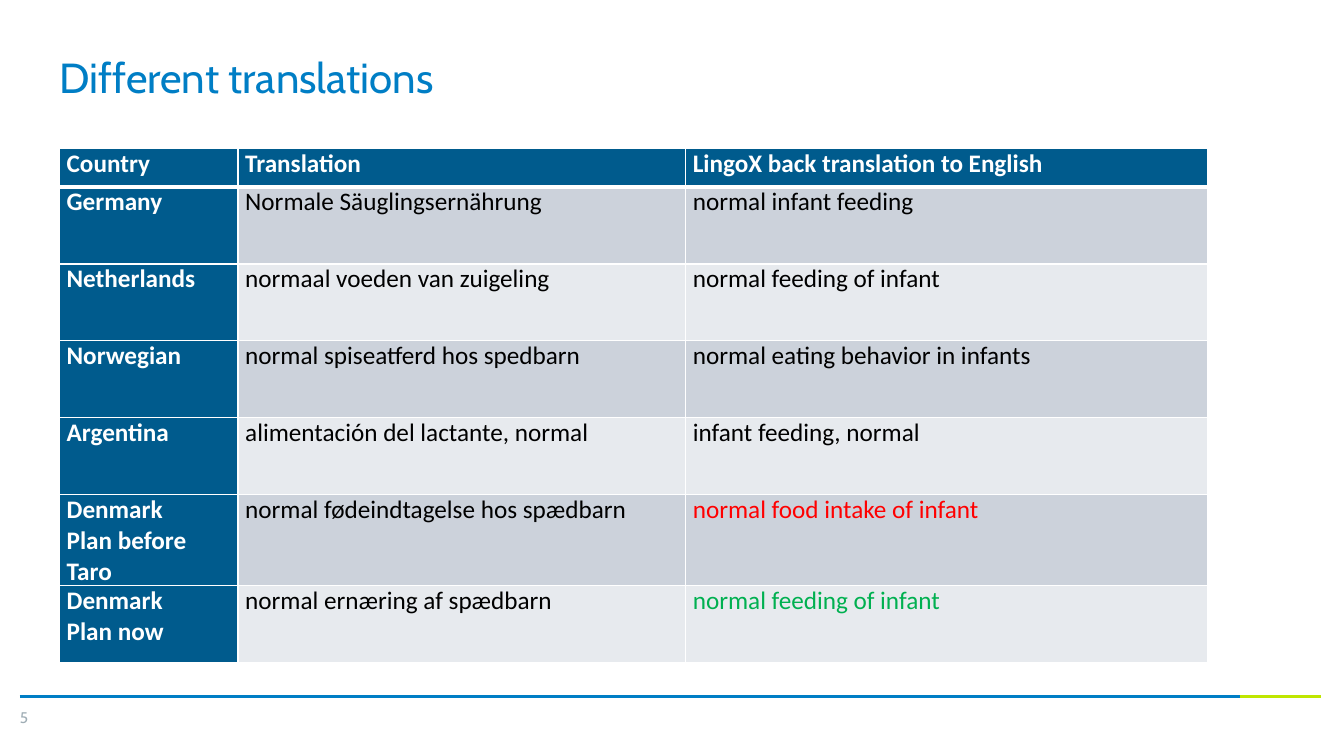
from dataclasses import dataclass

from lxml import etree
from pptx import Presentation
from pptx.dml.color import RGBColor
from pptx.enum.shapes import MSO_CONNECTOR
from pptx.enum.text import MSO_ANCHOR, PP_ALIGN
from pptx.oxml.ns import qn
from pptx.util import Cm, Pt

STRAIGHT = MSO_CONNECTOR.STRAIGHT
TOP = MSO_ANCHOR.TOP
LEFT = PP_ALIGN.LEFT


@dataclass(frozen=True)
class Theme:
    blue: str = "007EC5"
    navy: str = "005B8D"
    lime: str = "BFE600"
    grey: str = "9FADB5"
    white: str = "FFFFFF"
    black: str = "000000"
    red: str = "FF0000"
    green: str = "00B050"
    bands: tuple = ("CCD2DB", "E7EAEE")
    head_font: str = "Cabin"
    body_font: str = "Calibri"
    title_size: int = 30
    body_size: int = 18
    page_size: int = 11


T = Theme()

HEADER = ("Country", "Translation", "LingoX back translation to English")
ROWS = (
    ("Germany", "Normale Säuglingsernährung", "normal infant feeding", T.black),
    ("Netherlands", "normaal voeden van zuigeling", "normal feeding of infant", T.black),
    ("Norwegian", "normal spiseatferd hos spedbarn", "normal eating behavior in infants", T.black),
    ("Argentina", "alimentación del lactante, normal", "infant feeding, normal", T.black),
    ("Denmark\nPlan before Taro", "normal fødeindtagelse hos spædbarn", "normal food intake of infant", T.red),
    ("Denmark\nPlan now", "normal ernæring af spædbarn", "normal feeding of infant", T.green),
)
COL_WIDTHS = (4.5, 11.28, 13.16)
HEADER_HEIGHT, ROW_HEIGHT = 0.97, 1.94


def write(tf, text, *, size, color, font=T.body_font, bold=False, spacing=None):
    for i, line in enumerate(text.split("\n")):
        p = tf.paragraphs[0] if i == 0 else tf.add_paragraph()
        p.alignment = LEFT
        if spacing:
            p.line_spacing = Pt(spacing)
        r = p.add_run()
        r.text = line
        r.font.name = font
        r.font.size = Pt(size)
        r.font.bold = bold
        r.font.color.rgb = RGBColor.from_string(color)


def trim(tf):
    tf.margin_left = tf.margin_top = tf.margin_right = tf.margin_bottom = 0
    tf.vertical_anchor = TOP
    tf.word_wrap = True


def add_title(s, x, y, w, h):
    sp = s.shapes.title
    sp.left, sp.top, sp.width, sp.height = Cm(x), Cm(y), Cm(w), Cm(h)
    trim(sp.text_frame)
    write(sp.text_frame, "Different translations", size=T.title_size,
          color=T.blue, font=T.head_font, spacing=T.title_size)


def set_borders(cell, **widths):
    tcPr = cell._tc.get_or_add_tcPr()
    for side in "LRTB":
        ln = etree.SubElement(tcPr, qn(f"a:ln{side}"), w=str(Pt(widths.get(side, 1))))
        fill = etree.SubElement(ln, qn("a:solidFill"))
        etree.SubElement(fill, qn("a:srgbClr"), val=T.white)


def format_cell(cell, text, fill, color, bold, borders):
    cell.margin_left = cell.margin_right = Cm(0.18)
    cell.margin_top = cell.margin_bottom = 0
    cell.vertical_anchor = TOP
    set_borders(cell, **borders)
    cell.fill.solid()
    cell.fill.fore_color.rgb = RGBColor.from_string(fill)
    write(cell.text_frame, text, size=T.body_size, color=color, bold=bold)


def add_translations(s, x, y):
    height = HEADER_HEIGHT + ROW_HEIGHT * len(ROWS)
    table = s.shapes.add_table(len(ROWS) + 1, len(HEADER), Cm(x), Cm(y),
                               Cm(sum(COL_WIDTHS)), Cm(height)).table
    for col, width in zip(table.columns, COL_WIDTHS):
        col.width = Cm(width)
    for i, row in enumerate(table.rows):
        row.height = Cm(ROW_HEIGHT if i else HEADER_HEIGHT)

    for c, text in enumerate(HEADER):
        format_cell(table.cell(0, c), text, T.navy, T.white, True, {"B": 3})
    for i, (country, translation, back, back_color) in enumerate(ROWS):
        band = T.bands[i % 2]
        borders = {} if i else {"T": 3}
        styles = ((country, T.navy, T.white, True),
                  (translation, band, T.black, False),
                  (back, band, back_color, False))
        for c, style in enumerate(styles):
            format_cell(table.cell(i + 1, c), *style, borders)


def add_rule(s, x1, x2, y, color):
    line = s.shapes.add_connector(STRAIGHT, Cm(x1), Cm(y), Cm(x2), Cm(y))
    line.line.color.rgb = RGBColor.from_string(color)
    line.line.width = Pt(2.25)
    etree.SubElement(line._element.spPr, qn("a:effectLst"))


def add_footer(s, x, y, w):
    add_rule(s, x, x + w, y, T.lime)
    add_rule(s, x, x + w - 2.06, y, T.blue)
    tf = s.shapes.add_textbox(Cm(x), Cm(y + 0.3), Cm(2), Cm(0.7)).text_frame
    trim(tf)
    write(tf, "5", size=T.page_size, color=T.grey, font=T.head_font)


def main():
    prs = Presentation()
    prs.slide_width, prs.slide_height = Cm(33.87), Cm(19.05)
    s = prs.slides.add_slide(prs.slide_layouts.get_by_name("Title Only"))
    add_footer(s, 0.5, 17.55, 32.8)
    add_title(s, 1.5, 1.5, 29.7, 1.3)
    add_translations(s, 1.5, 3.74)
    prs.save("out.pptx")


if __name__ == "__main__":
    main()
